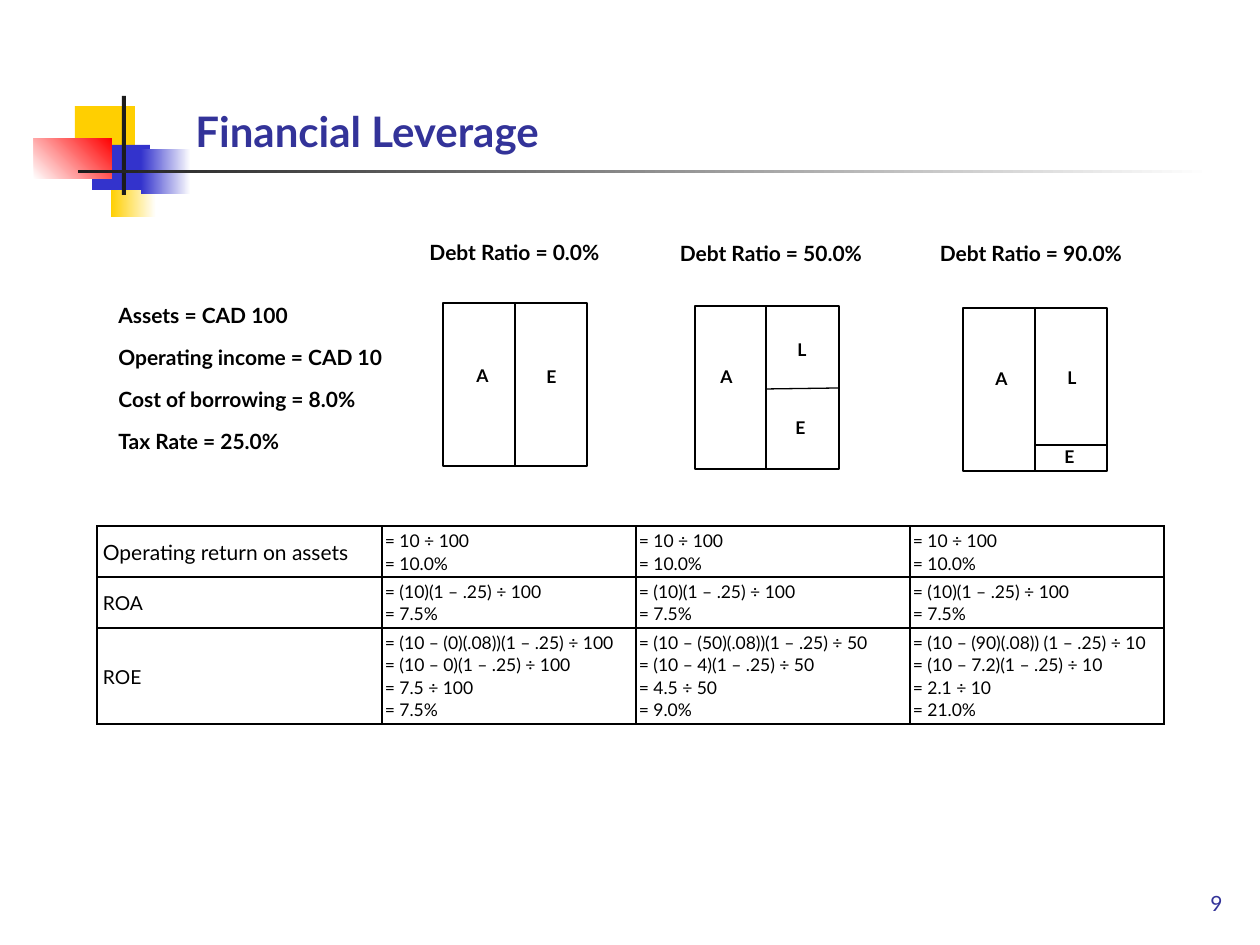
from lxml.etree import SubElement
from pptx import Presentation
from pptx.dml.color import RGBColor
from pptx.enum.shapes import MSO_CONNECTOR as Connector, MSO_SHAPE as Shape
from pptx.enum.text import MSO_ANCHOR as Anchor, PP_ALIGN as Align
from pptx.oxml.ns import qn
from pptx.util import Emu, Pt

SCALE = 914400 / 126
BLACK = RGBColor(0x00, 0x00, 0x00)
WHITE = RGBColor(0xFF, 0xFF, 0xFF)
CHARCOAL = RGBColor(0x1C, 0x1C, 0x1C)
YELLOW = RGBColor(0xFF, 0xCF, 0x01)
BLUE = RGBColor(0x33, 0x33, 0xCC)
RED = RGBColor(0xFF, 0x00, 0x00)
NAVY = RGBColor(0x33, 0x33, 0x99)


def px(*lengths):
    return [Emu(round(length * SCALE)) for length in lengths]


def write(frame, lines, size, color=BLACK, bold=False, align=Align.LEFT,
          anchor=Anchor.TOP, before=0, spacing=None):
    frame.word_wrap = True
    frame.vertical_anchor = anchor
    frame.text = "\n".join(lines)
    for paragraph in frame.paragraphs:
        paragraph.alignment = align
        paragraph.space_before = Pt(before)
        paragraph.line_spacing = spacing
        font = paragraph.runs[0].font
        font.name, font.size, font.bold = "Lato", Pt(size), bold
        font.color.rgb = color


prs = Presentation()
prs.slide_width, prs.slide_height = px(1260, 945)
slide = prs.slides.add_slide(prs.slide_layouts[6])
shapes = slide.shapes

# Corner ornament: box, start colour, end colour, gradient angle
ornament = [
    ((111, 151, 45, 66), YELLOW, WHITE, 0),
    ((75, 106, 60, 44), YELLOW, None, 0),
    ((92, 145, 58, 45), BLUE, None, 0),
    ((141, 149, 50, 45), BLUE, WHITE, 0),
    ((34, 138, 78, 41), WHITE, RED, 45),
    ((122, 96, 4, 99), CHARCOAL, None, 0),
    ((78, 170, 1134, 3), CHARCOAL, WHITE, 0),
]
for box, start, end, angle in ornament:
    block = shapes.add_shape(Shape.RECTANGLE, *px(*box))
    block.shadow.inherit = False
    block.line.fill.background()
    if end is None:
        block.fill.solid()
        block.fill.fore_color.rgb = start
    else:
        block.fill.gradient()
        block.fill.gradient_angle = angle
        for stop, color in zip(block.fill.gradient_stops, (start, end)):
            stop.color.rgb = color

# Title and page number
title = shapes.add_textbox(*px(183, 95, 914, 67))
write(title.text_frame, ["Financial Leverage"], 24, NAVY, bold=True, anchor=Anchor.BOTTOM)
page_number = shapes.add_textbox(*px(948, 859, 287, 63))
write(page_number.text_frame, ["9"], 12, NAVY, align=Align.RIGHT, anchor=Anchor.BOTTOM)

# Assumptions
assumptions = shapes.add_textbox(*px(106, 296, 305, 150))
write(assumptions.text_frame,
      ["Assets = CAD 100", "Operating income = CAD 10",
       "Cost of borrowing = 8.0%", "Tax Rate = 25.0%"],
      12, bold=True, before=9.6)

# Balance sheets: heading and its box, outline, dividers, lettered parts
balance_sheets = [
    ("Debt Ratio = 0.0%", (408, 233, 213, 34), (443, 303, 144, 163),
     [(515, 303, 515, 466)],
     [("A", 464, 359), ("E", 534, 360)]),
    ("Debt Ratio = 50.0%", (661, 234, 220, 32), (695, 306, 144, 163),
     [(766, 307, 766, 470), (766, 389, 839, 388)],
     [("A", 708, 360), ("L", 785, 333), ("E", 783, 411)]),
    ("Debt Ratio = 90.0%", (921, 234, 220, 33), (963, 308, 144, 163),
     [(1035, 308, 1035, 471), (1035, 445, 1107, 445)],
     [("A", 983, 362), ("L", 1055, 361), ("E", 1052, 440)]),
]
for heading, heading_box, outline_box, dividers, parts in balance_sheets:
    ratio = shapes.add_textbox(*px(*heading_box))
    write(ratio.text_frame, [heading], 12, bold=True, align=Align.CENTER)
    outline = shapes.add_shape(Shape.RECTANGLE, *px(*outline_box))
    outline.shadow.inherit = False
    outline.fill.background()
    outline.line.color.rgb = BLACK
    outline.line.width = Pt(0.75)
    for ends in dividers:
        divider = shapes.add_connector(Connector.STRAIGHT, *px(*ends))
        divider.line.color.rgb = BLACK
        divider.line.width = Pt(0.75)
        SubElement(divider._element.spPr, qn("a:effectLst"))
    for letter, left, top in parts:
        part = shapes.add_textbox(*px(left, top, 40, 34))
        write(part.text_frame, [letter], 10, bold=True, before=10.8)

# Returns table: measure, its size, then the workings at each debt ratio
returns = [
    ("Operating return on assets", 12, [["= 10 ÷ 100", "= 10.0%"]] * 3),
    ("ROA", 11, [["= (10)(1 – .25) ÷ 100", "= 7.5%"]] * 3),
    ("ROE", 11, [
        ["= (10 – (0)(.08))(1 – .25) ÷ 100", "= (10 – 0)(1 – .25) ÷ 100",
         "= 7.5 ÷ 100", "= 7.5%"],
        ["= (10 – (50)(.08))(1 – .25) ÷ 50", "= (10 – 4)(1 – .25) ÷ 50",
         "= 4.5 ÷ 50", "= 9.0%"],
        ["= (10 – (90)(.08)) (1 – .25) ÷ 10", "= (10 – 7.2)(1 – .25) ÷ 10",
         "= 2.1 ÷ 10", "= 21.0%"],
    ]),
]
table = shapes.add_table(3, 4, *px(97, 526, 1067, 195)).table
table.first_row = table.horz_banding = False
for column, width in zip(table.columns, px(285, 254, 274, 254)):
    column.width = width
for row, height in zip(table.rows, px(50, 50, 95)):
    row.height = height

for row, (measure, size, workings) in zip(table.rows, returns):
    for index, (cell, lines) in enumerate(zip(row.cells, [[measure], *workings])):
        is_measure = index == 0
        inset = px(6 if is_measure else 3)[0]
        cell.margin_left = cell.margin_right = inset
        cell.margin_top = cell.margin_bottom = inset
        write(cell.text_frame, lines, size if is_measure else 10, spacing=1.07)
        cell.vertical_anchor = Anchor.MIDDLE if is_measure else Anchor.TOP
        properties = cell._tc.get_or_add_tcPr()
        for side in ("a:lnL", "a:lnR", "a:lnT", "a:lnB"):
            border = SubElement(properties, qn(side), w=str(Pt(1)))
            ink = SubElement(border, qn("a:solidFill"))
            SubElement(ink, qn("a:srgbClr"), val=str(BLACK))
        cell.fill.background()

prs.save("out.pptx")
